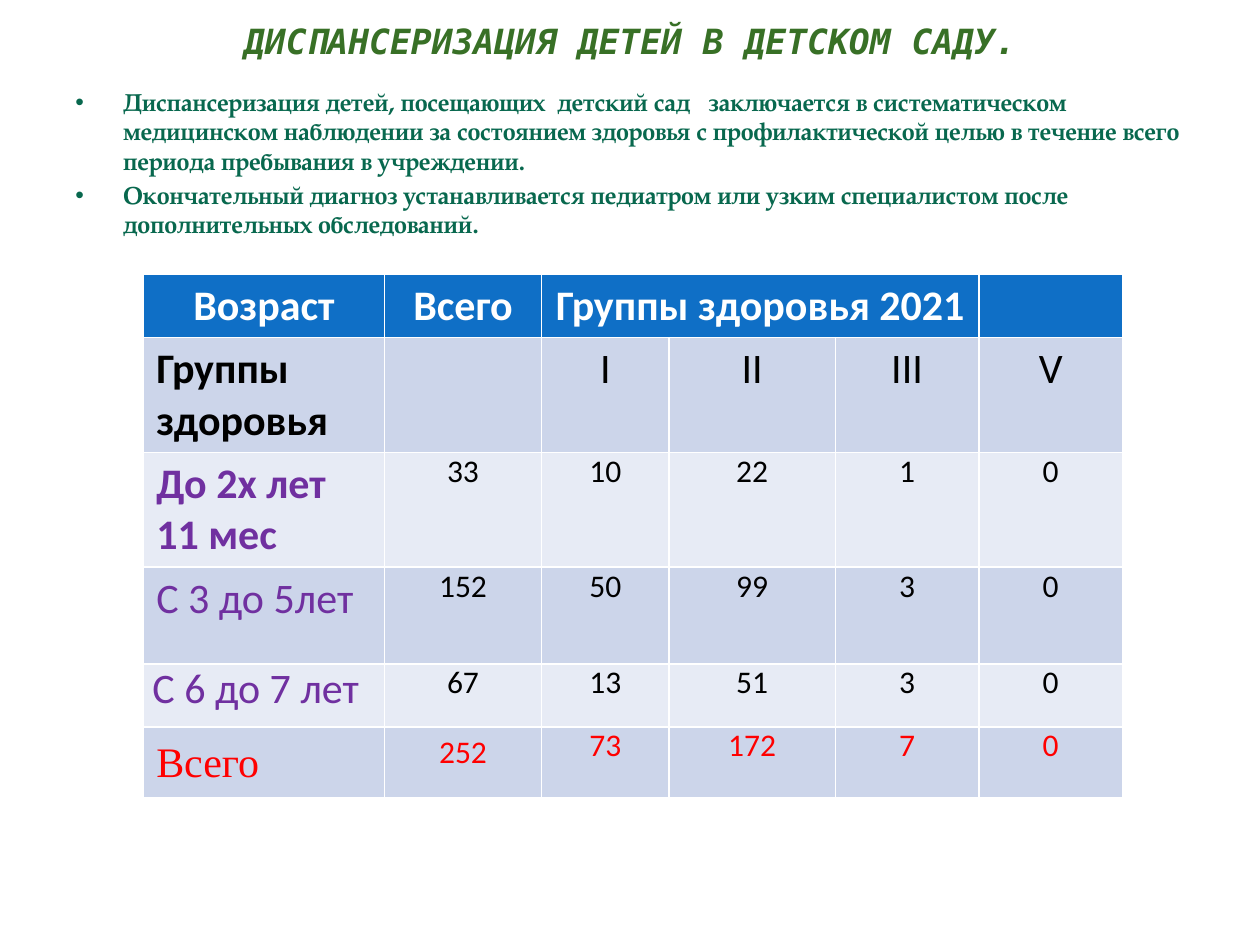
from pptx import Presentation, util as u
from pptx.dml.color import RGBColor
from pptx.enum import text
from pptx.oxml import parse_xml
from pptx.oxml.ns import nsdecls

TITLE = "ДИСПАНСЕРИЗАЦИЯ ДЕТЕЙ В ДЕТСКОМ САДУ."
POINTS = [
    "Диспансеризация детей, посещающих  детский сад   заключается в систематическом "
    "медицинском наблюдении за состоянием здоровья с профилактической целью в течение "
    "всего периода пребывания в учреждении.",
    "Окончательный диагноз устанавливается педиатром или узким специалистом после "
    "дополнительных обследований.",
]
ROWS = [
    ["Возраст", "Всего", "Группы здоровья 2021", "", "", ""],
    ["Группы здоровья", "", "I", "II", "III", "V"],
    ["До 2х лет 11 мес", "33", "10", "22", "1", "0"],
    ["С 3 до 5лет", "152", "50", "99", "3", "0"],
    ["С 6 до 7 лет", "67", "13", "51", "3", "0"],
    ["Всего", "252", "73", "172", "7", "0"],
]
COL_WIDTHS = [1.91, 1.25, 1.01, 1.32, 1.14, 1.14]
ROW_HEIGHTS = [0.49, 0.91, 0.91, 0.77, 0.5, 0.53]
HEADER, GROUPS, TODDLERS, MIDDLE, SENIOR, TOTAL = range(6)
LABEL_COLORS = ["FFFFFF", "000000", "7030A0", "7030A0", "7030A0", "FF0000"]


def rgb(value):
    return RGBColor.from_string(value)


def style(r, size, name, color, bold=False, italic=False):
    r.font.size = u.Pt(size)
    r.font.name = name
    r.font.color.rgb = rgb(color)
    r.font.bold = bold
    r.font.italic = italic


def add_title(s, x, y, w, h):
    sp = s.shapes.title
    sp.left, sp.top, sp.width, sp.height = map(u.Inches, (x, y, w, h))
    tf = sp.text_frame
    tf.text = TITLE
    tf.auto_size = text.MSO_AUTO_SIZE.NONE
    tf.vertical_anchor = text.MSO_ANCHOR.MIDDLE
    p = tf.paragraphs[0]
    p.alignment = text.PP_ALIGN.CENTER
    style(p.runs[0], 19.8, "DejaVu Sans Mono", "387026", True, True)


def add_points(s, x, y, w, h):
    sp = s.shapes.add_textbox(*map(u.Inches, (x, y, w, h)))
    tf = sp.text_frame
    tf.word_wrap = True
    for i, point in enumerate(POINTS):
        p = tf.paragraphs[0] if i == 0 else tf.add_paragraph()
        p.text = point
        pPr = p._p.get_or_add_pPr()
        pPr.set("marL", str(u.Inches(0.38)))
        pPr.set("indent", str(u.Inches(-0.38)))
        pPr.append(parse_xml(f'<a:buFont {nsdecls("a")} typeface="Arial"/>'))
        pPr.append(parse_xml(f'<a:buChar {nsdecls("a")} char="•"/>'))
        if i:
            p.space_before = u.Pt(2.8)
        style(p.runs[0], 14, "TeX Gyre Pagella", "08684E", True)


def fill_cell(cell, value, row, col):
    cell.fill.solid()
    band = "CCD5EA" if row % 2 else "E7EBF5"
    cell.fill.fore_color.rgb = rgb("0F6FC6" if row == HEADER else band)
    is_count = row >= TODDLERS and col > 0
    if (is_count and (row, col) != (TOTAL, 1)) or (row, col) == (SENIOR, 0):
        cell.margin_left = cell.margin_right = u.Inches(0.07)
        cell.margin_top = cell.margin_bottom = 0
    if not value:
        return
    cell.text_frame.text = value
    p = cell.text_frame.paragraphs[0]
    if row == HEADER or col > 0:
        p.alignment = text.PP_ALIGN.CENTER
    name = "Calibri"
    if (row, col) == (TOTAL, 0):
        name = "Times New Roman"
        p.line_spacing = 1.15
    colored = col == 0 or row in (HEADER, TOTAL)
    bold = row == HEADER or (col == 0 and row in (GROUPS, TODDLERS))
    style(p.runs[0], 18 if is_count else 24, name,
          LABEL_COLORS[row] if colored else "000000", bold)


def add_health_table(s, x, y, w, h):
    box = map(u.Inches, (x, y, w, h))
    tbl = s.shapes.add_table(len(ROWS), len(COL_WIDTHS), *box).table
    for column, width in zip(tbl.columns, COL_WIDTHS):
        column.width = u.Inches(width * w / sum(COL_WIDTHS))
    for row, height in zip(tbl.rows, ROW_HEIGHTS):
        row.height = u.Inches(height * h / sum(ROW_HEIGHTS))
    for i, values in enumerate(ROWS):
        for j, value in enumerate(values):
            fill_cell(tbl.cell(i, j), value, i, j)
    tbl.cell(HEADER, 2).merge(tbl.cell(HEADER, 4))


def main():
    prs = Presentation()
    prs.slide_width, prs.slide_height = u.Inches(10), u.Inches(7.5)
    s = prs.slides.add_slide(prs.slide_layouts[5])
    add_title(s, 0.5, 0.16, 9, 0.32)
    add_points(s, 0.5, 0.64, 9, 6.05)
    add_health_table(s, 1.14, 2.18, 7.77, 4.11)
    prs.save("out.pptx")


if __name__ == "__main__":
    main()
